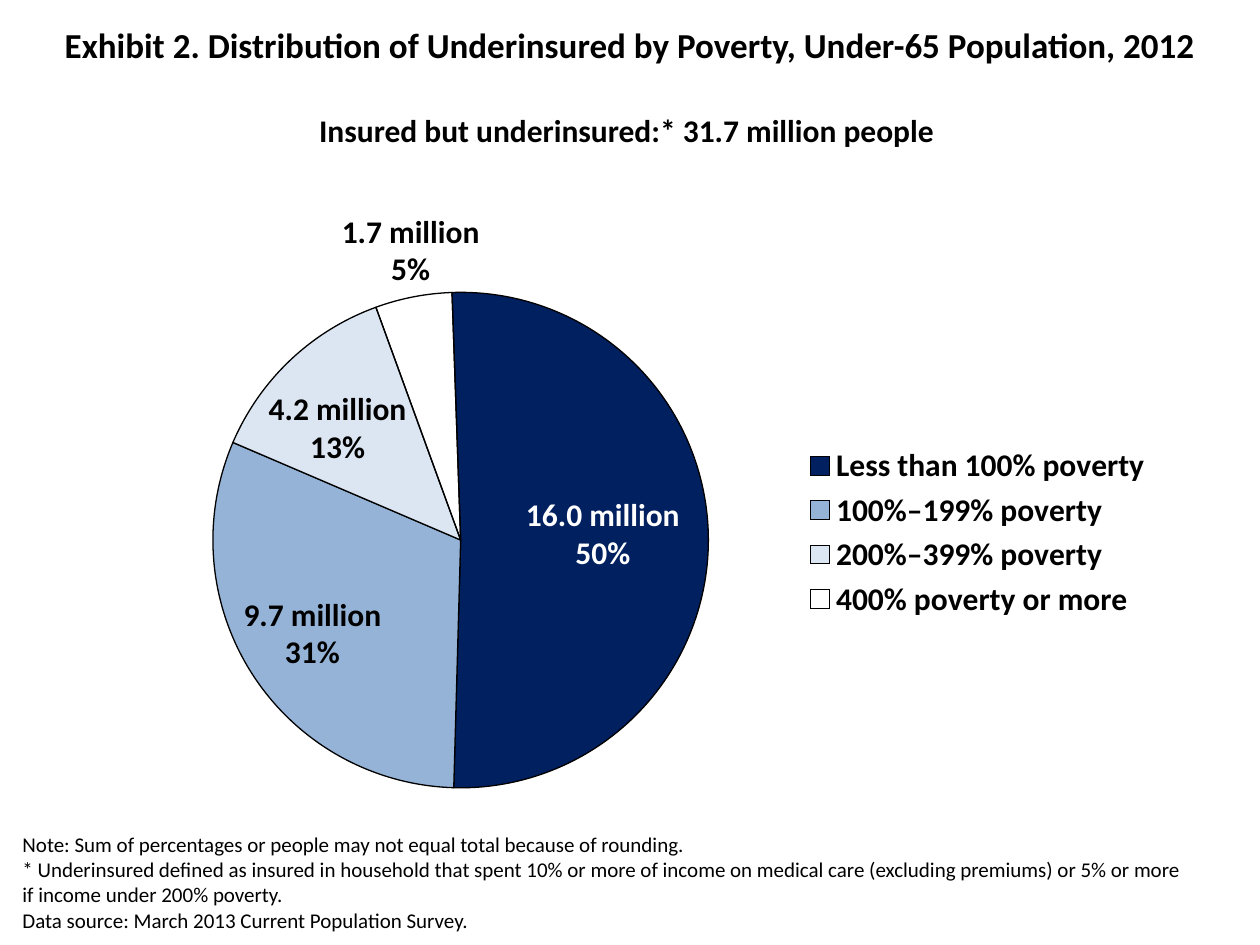
from typing import NamedTuple

from lxml.etree import SubElement
from pptx import Presentation
from pptx.chart.chart import Chart
from pptx.chart.data import CategoryChartData
from pptx.dml.color import RGBColor
from pptx.enum.chart import XL_CHART_TYPE, XL_LEGEND_POSITION
from pptx.enum.text import MSO_ANCHOR, PP_ALIGN
from pptx.oxml.ns import qn
from pptx.slide import Slide
from pptx.text.text import Font
from pptx.util import Inches, Pt

FONT_NAME = "Calibri"
BLACK = "000000"
WHITE = "FFFFFF"


class Area(NamedTuple):
    left: float
    top: float
    width: float
    height: float


class Slice(NamedTuple):
    category: str
    percent: int
    fill: str | None
    people: str
    label_area: Area
    label_color: str = BLACK


SLICES = [
    Slice("Less than 100% poverty", 51, "002060", "16.0 million\n50%",
          Area(4.07, 3.88, 1.43, 0.71), WHITE),
    Slice("100%–199% poverty", 31, "95B3D7", "9.7 million\n31%", Area(1.83, 4.67, 1.3, 0.71)),
    Slice("200%–399% poverty", 13, "DCE6F2", "4.2 million\n13%", Area(2.03, 3.04, 1.3, 0.71)),
    Slice("400% poverty or more", 5, None, "1.7 million\n5%", Area(2.61, 1.63, 1.3, 0.71)),
]

NOTES = [
    "Note: Sum of percentages or people may not equal total because of rounding.",
    "* Underinsured defined as insured in household that spent 10% or more of income on medical "
    "care (excluding premiums) or 5% or more if income under 200% poverty. \n"
    "Data source: March 2013 Current Population Survey.",
]


def rgb(value: str) -> RGBColor:
    return RGBColor.from_string(value)


def style_font(font: Font, size: float, color: str = BLACK, bold: bool = False) -> None:
    font.name = FONT_NAME
    font.size = Pt(size)
    font.bold = bold
    font.color.rgb = rgb(color)


def add_text(page: Slide, area: Area, paragraphs: list[str], size: float, color: str = BLACK,
             bold: bool = True, align: PP_ALIGN = PP_ALIGN.CENTER, wrap: bool = False,
             anchor: MSO_ANCHOR = MSO_ANCHOR.TOP) -> None:
    """Add a text box; a newline inside a paragraph becomes a line break."""
    box = page.shapes.add_textbox(*map(Inches, area))
    frame = box.text_frame
    frame.word_wrap = wrap
    frame.vertical_anchor = anchor
    for number, text in enumerate(paragraphs):
        para = frame.add_paragraph() if number else frame.paragraphs[0]
        para.alignment = align
        for line_number, line in enumerate(text.split("\n")):
            if line_number:
                para.add_line_break()
            span = para.add_run()
            span.text = line
            style_font(span.font, size, color, bold)


def place_plot(chart: Chart, area: Area) -> None:
    """Fix the inner plot area, in fractions of the chart."""
    plot_area = chart._chartSpace.chart.plotArea
    for old_layout in plot_area.findall(qn("c:layout")):
        plot_area.remove(old_layout)
    layout = SubElement(plot_area, qn("c:layout"))
    plot_area.insert(0, layout)
    manual = SubElement(layout, qn("c:manualLayout"))
    settings = [("layoutTarget", "inner"), ("xMode", "edge"), ("yMode", "edge"),
                *zip("xywh", area)]
    for name, value in settings:
        SubElement(manual, qn(f"c:{name}")).set("val", str(value))


def add_pie(page: Slide, area: Area, slices: list[Slice]) -> None:
    data = CategoryChartData()
    data.categories = [part.category for part in slices]
    data.add_series("Series 1", [part.percent for part in slices])
    chart = page.shapes.add_chart(XL_CHART_TYPE.PIE, *map(Inches, area), data).chart
    chart.has_title = False
    style_font(chart.font, 18)

    # Legend
    chart.has_legend = True
    chart.legend.position = XL_LEGEND_POSITION.RIGHT
    chart.legend.include_in_layout = False
    style_font(chart.legend.font, 18, bold=True)

    # Slices
    plot = chart.plots[0]
    plot.vary_by_categories = True
    for number, part in enumerate(slices):
        point_format = plot.series[0].points[number].format
        if part.fill:
            point_format.fill.solid()
            point_format.fill.fore_color.rgb = rgb(part.fill)
        else:
            point_format.fill.background()
        point_format.line.color.rgb = rgb(BLACK)
        point_format.line.width = Pt(0.75)

    # Rotation and position
    pie = chart._chartSpace.chart.plotArea.find(qn("c:pieChart"))
    angle = pie.find(qn("c:firstSliceAng"))
    if angle is None:
        angle = SubElement(pie, qn("c:firstSliceAng"))
    angle.set("val", "358")
    place_plot(chart, Area(0.16, 0.115, 0.437, 0.795))


def main() -> None:
    deck = Presentation()
    deck.slide_width, deck.slide_height = Inches(10), Inches(7.5)
    page = deck.slides.add_slide(deck.slide_layouts[6])

    # Title
    add_text(page, Area(0, 0.1, 10, 0.5),
             ["Exhibit 2. Distribution of Underinsured by Poverty, Under-65 Population, 2012"],
             20, wrap=True, anchor=MSO_ANCHOR.MIDDLE)

    # Chart and notes
    add_pie(page, Area(0.25, 1.75, 9, 4.95), SLICES)
    add_text(page, Area(0.08, 6.55, 9.5, 0.91), NOTES, 12, bold=False,
             align=PP_ALIGN.LEFT, wrap=True)

    # Subtitle and slice labels
    add_text(page, Area(2.38, 0.83, 5.19, 0.4),
             ["Insured but underinsured:* 31.7 million people"], 18)
    for part in SLICES:
        add_text(page, part.label_area, [part.people], 18, part.label_color)

    deck.save("out.pptx")


if __name__ == "__main__":
    main()
